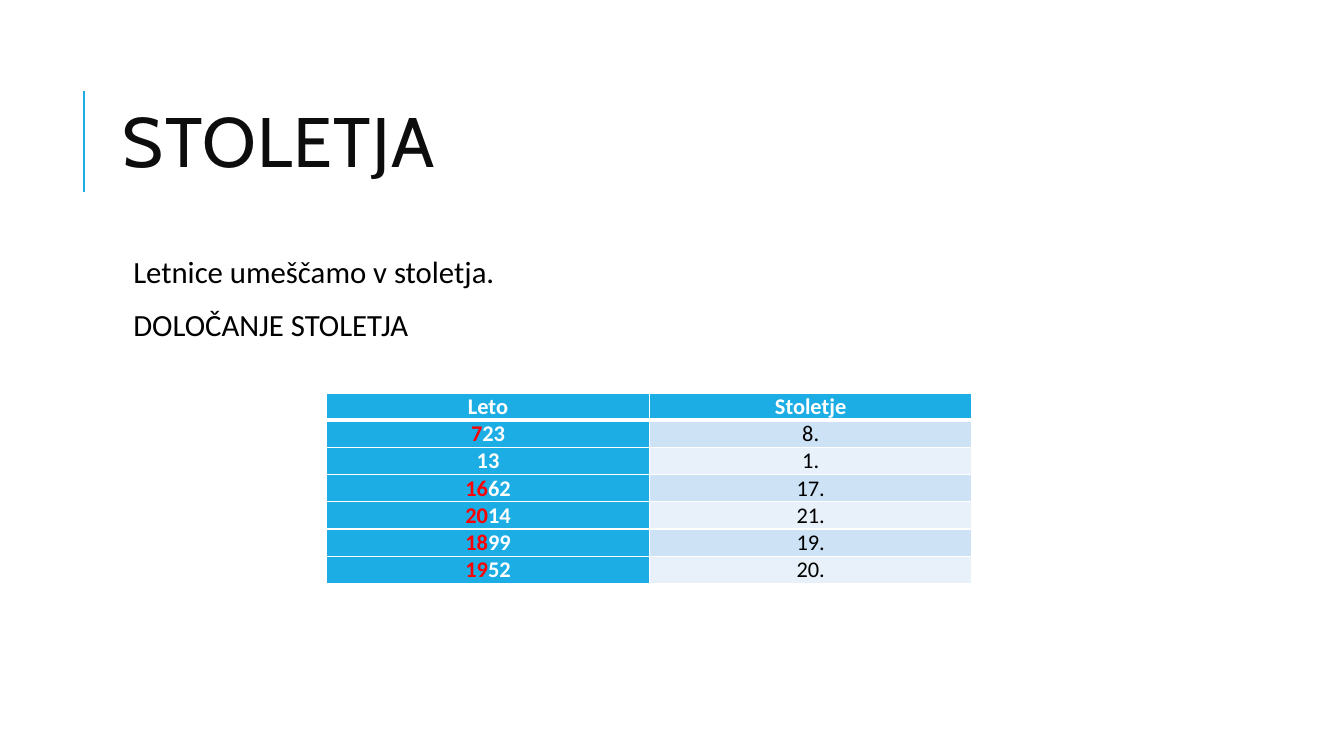
from typing import NamedTuple

from lxml.etree import SubElement
from pptx import Presentation
from pptx.dml.color import RGBColor
from pptx.enum.shapes import MSO_CONNECTOR
from pptx.enum.text import MSO_ANCHOR, PP_ALIGN
from pptx.oxml.ns import qn
from pptx.util import Inches, Pt

BLUE = RGBColor(0x1C, 0xAD, 0xE4)
BAND_DARK = RGBColor(0xCD, 0xE3, 0xF5)
BAND_LIGHT = RGBColor(0xE8, 0xF1, 0xFA)
TITLE_INK = RGBColor(0x0D, 0x0D, 0x0D)
BLACK = RGBColor(0, 0, 0)
WHITE = RGBColor(0xFF, 0xFF, 0xFF)
RED = RGBColor(0xFF, 0, 0)

ROW_HEIGHT = 0.27
COLUMN_WIDTH = 3.2


class YearRow(NamedTuple):
    year: str
    century: str


class Piece(NamedTuple):
    text: str
    color: RGBColor
    bold: bool = False
    font: str = "Calibri"


HEADER = YearRow("Leto", "Stoletje")
YEARS = [
    YearRow("723", "8."),
    YearRow("13", "1."),
    YearRow("1662", "17."),
    YearRow("2014", "21."),
    YearRow("1899", "19."),
    YearRow("1952", "20."),
]
BODY_LINES = ["Letnice umeščamo v stoletja.", "DOLOČANJE STOLETJA"]


def add_pieces(paragraph, pieces: list[Piece], size: float) -> None:
    for piece in pieces:
        run = paragraph.add_run()
        run.text = piece.text
        run.font.name = piece.font
        run.font.size = Pt(size)
        run.font.bold = piece.bold
        run.font.color.rgb = piece.color


def add_title(slide) -> None:
    accent = slide.shapes.add_connector(
        MSO_CONNECTOR.STRAIGHT, Inches(0.83), Inches(1.9), Inches(0.83), Inches(0.9))
    accent.line.color.rgb = BLUE
    accent.line.width = Pt(1.5)
    SubElement(accent._element.spPr, qn("a:effectLst"))

    title = slide.shapes.add_textbox(Inches(1.12), Inches(0.64), Inches(10.63), Inches(1.64))
    frame = title.text_frame
    frame.word_wrap = True
    frame.vertical_anchor = MSO_ANCHOR.MIDDLE
    paragraph = frame.paragraphs[0]
    paragraph.line_spacing = 0.8
    add_pieces(paragraph, [Piece("STOLETJA", TITLE_INK, font="Cabin")], 50)
    paragraph.runs[0].font._element.set("spc", "100")


def set_blank_bullet(paragraph) -> None:
    """Hang the paragraph on an invisible bullet."""
    properties = paragraph._p.get_or_add_pPr()
    properties.set("marL", str(Inches(0.1)))
    properties.set("indent", str(-Inches(0.1)))
    color = SubElement(properties, qn("a:buClr"))
    SubElement(color, qn("a:srgbClr"), val=str(BLUE))
    SubElement(properties, qn("a:buChar"), char=" ")


def add_body(slide) -> None:
    body = slide.shapes.add_textbox(Inches(1.12), Inches(2.5), Inches(10.63), Inches(4.4))
    frame = body.text_frame
    frame.word_wrap = True
    frame.margin_left = frame.margin_right = Inches(0.05)
    frame.margin_top = frame.margin_bottom = Inches(0.05)
    for index, line in enumerate(BODY_LINES):
        paragraph = frame.add_paragraph() if index else frame.paragraphs[0]
        paragraph.line_spacing = 0.9
        paragraph.space_before = Pt(12)
        paragraph.space_after = Pt(2)
        set_blank_bullet(paragraph)
        add_pieces(paragraph, [Piece(line, BLACK)], 22)


def set_borders(cell, top: float, bottom: float) -> None:
    properties = cell._tc.get_or_add_tcPr()
    for side, width in (("L", 1), ("R", 1), ("T", top), ("B", bottom)):
        line = SubElement(properties, qn(f"a:ln{side}"), w=str(Pt(width)))
        fill = SubElement(line, qn("a:solidFill"))
        SubElement(fill, qn("a:srgbClr"), val=str(WHITE))


def fill_cell(cell, pieces: list[Piece], fill: RGBColor, row: int) -> None:
    set_borders(cell, top=3 if row == 1 else 1, bottom=3 if row == 0 else 1)
    cell.fill.solid()
    cell.fill.fore_color.rgb = fill
    cell.margin_left = cell.margin_right = Inches(0.07)
    cell.margin_top = cell.margin_bottom = 0
    paragraph = cell.text_frame.paragraphs[0]
    paragraph.alignment = PP_ALIGN.CENTER
    add_pieces(paragraph, pieces, 16)


def year_pieces(year: str) -> list[Piece]:
    """Mark the digits before the last two, which give the century, in red."""
    pieces = [Piece(year[:-2], RED, True), Piece(year[-2:], WHITE, True)]
    return [piece for piece in pieces if piece.text]


def add_century_table(slide) -> None:
    row_count = len(YEARS) + 1
    table = slide.shapes.add_table(
        row_count, 2, Inches(3.24), Inches(3.9),
        Inches(2 * COLUMN_WIDTH), Inches(row_count * ROW_HEIGHT)).table
    for column in table.columns:
        column.width = Inches(COLUMN_WIDTH)
    for row in table.rows:
        row.height = Inches(ROW_HEIGHT)

    for column, heading in enumerate(HEADER):
        fill_cell(table.cell(0, column), [Piece(heading, WHITE, True)], BLUE, 0)
    for row, entry in enumerate(YEARS, start=1):
        fill_cell(table.cell(row, 0), year_pieces(entry.year), BLUE, row)
        band = BAND_DARK if row % 2 else BAND_LIGHT
        fill_cell(table.cell(row, 1), [Piece(entry.century, BLACK)], band, row)


def main() -> None:
    presentation = Presentation()
    presentation.slide_width = Inches(13.33)
    presentation.slide_height = Inches(7.5)
    slide = presentation.slides.add_slide(presentation.slide_layouts[6])
    add_title(slide)
    add_body(slide)
    add_century_table(slide)
    presentation.save("out.pptx")


if __name__ == "__main__":
    main()
